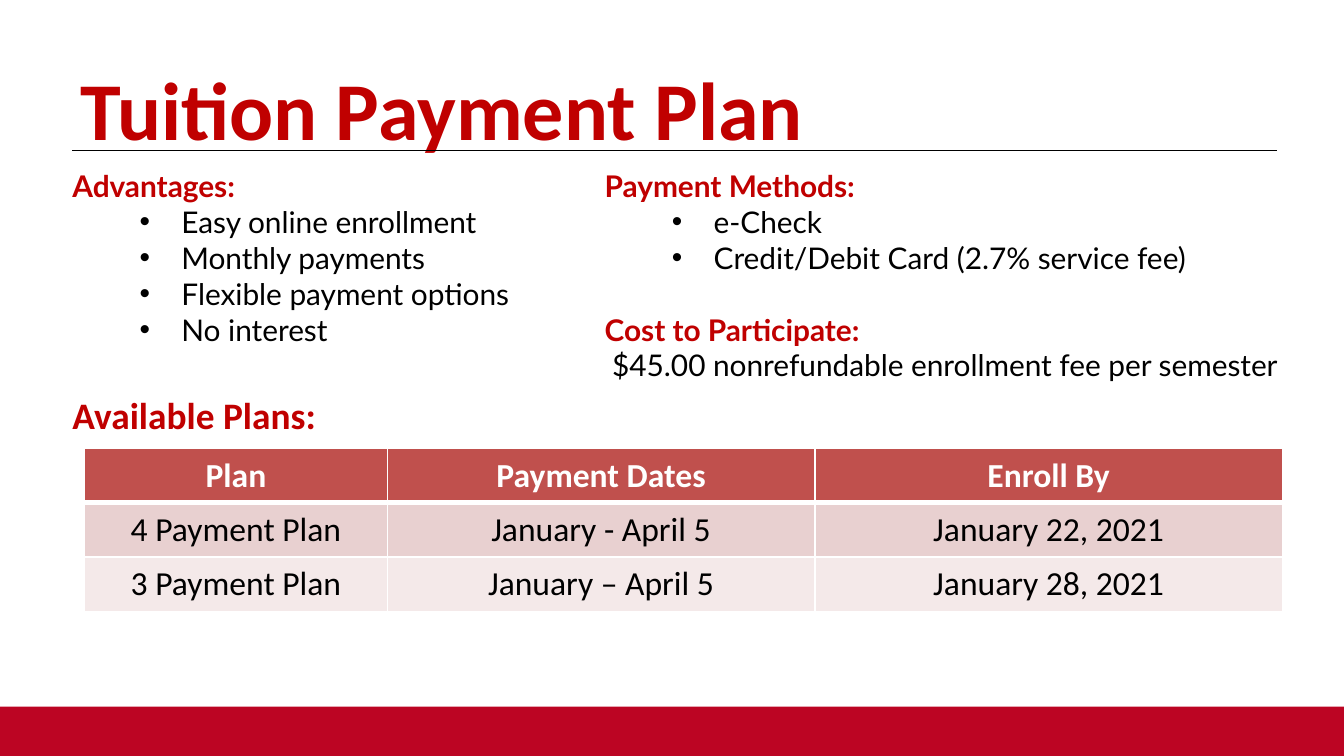
from dataclasses import dataclass

from lxml import etree
from pptx import Presentation
from pptx.dml.color import RGBColor
from pptx.enum.shapes import MSO_CONNECTOR, MSO_SHAPE
from pptx.enum.text import MSO_ANCHOR, MSO_AUTO_SIZE, PP_ALIGN
from pptx.oxml.ns import qn
from pptx.util import Cm, Pt

LEFT, CENTER = PP_ALIGN.LEFT, PP_ALIGN.CENTER
TOP, MIDDLE = MSO_ANCHOR.TOP, MSO_ANCHOR.MIDDLE
NO_FIT, GROW = MSO_AUTO_SIZE.NONE, MSO_AUTO_SIZE.SHAPE_TO_FIT_TEXT
RECTANGLE, STRAIGHT = MSO_SHAPE.RECTANGLE, MSO_CONNECTOR.STRAIGHT


@dataclass(frozen=True)
class Theme:
    red: str = "C00000"
    bar: str = "BC0523"
    black: str = "000000"
    white: str = "FFFFFF"
    header: str = "C0504D"
    bands: tuple = ("E8D0D0", "F4E9E9")
    head_font: str = "Calibri"
    text_font: str = "Lato"
    title: int = 44
    subhead: int = 20
    table: int = 18
    text: int = 16


T = Theme()


def rgb(color):
    return RGBColor.from_string(color)


def add_run(p, text, size, name, color, bold=False):
    r = p.add_run()
    r.text = text
    r.font.color.rgb = rgb(color)
    formats = {"size": Pt(size), "name": name, "bold": bold}
    for key, value in formats.items():
        setattr(r.font, key, value)


def set_frame(tf, anchor=TOP, fit=NO_FIT):
    formats = {"word_wrap": True, "auto_size": fit, "vertical_anchor": anchor}
    for key, value in formats.items():
        setattr(tf, key, value)


def set_indent(p, left, first=0, bullet=None):
    pPr = p._p.get_or_add_pPr()
    pPr.set("marL", str(Cm(left)))
    pPr.set("indent", str(Cm(first)))
    if bullet:
        etree.SubElement(pPr, qn("a:buFont")).set("typeface", "Arial")
        etree.SubElement(pPr, qn("a:buChar")).set("char", bullet)


def add_footer_bar(s, x, y, w, h):
    sp = s.shapes.add_shape(RECTANGLE, Cm(x), Cm(y), Cm(w), Cm(h))
    sp.shadow.inherit = False
    sp.fill.solid()
    sp.fill.fore_color.rgb = rgb(T.bar)
    sp.line.fill.background()


def add_title(s, x, y, w, h, text):
    sp = s.shapes.title
    box = {"left": x, "top": y, "width": w, "height": h}
    for key, value in box.items():
        setattr(sp, key, Cm(value))
    set_frame(sp.text_frame, MIDDLE)
    p = sp.text_frame.paragraphs[0]
    p.alignment = LEFT
    add_run(p, text, T.title, T.head_font, T.red, True)
    # Rule under the title, near the bottom of its box
    rule_y = Cm(y + 0.84 * h)
    line = s.shapes.add_connector(STRAIGHT, Cm(x + 0.1), rule_y,
                                  Cm(x + w), rule_y)
    line.line.color.rgb = rgb(T.black)
    line.line.width = Pt(0.75)
    etree.SubElement(line._element.spPr, qn("a:effectLst"))


def add_text_column(s, x, y, w, h, sections):
    """Each section is a heading, its lines and whether they are bulleted."""
    tf = s.shapes.add_textbox(Cm(x), Cm(y), Cm(w), Cm(h)).text_frame
    set_frame(tf, fit=GROW)
    for i, (heading, lines, bulleted) in enumerate(sections):
        p = tf.add_paragraph() if i else tf.paragraphs[0]
        if i:
            p.space_before = Pt(1.2 * T.text)
        add_run(p, heading, T.text, T.text_font, T.red, True)
        for text in lines:
            p = tf.add_paragraph()
            if bulleted:
                p.level = 1
                set_indent(p, 2.06, -0.79, "•")
            else:
                set_indent(p, 0.14)
            add_run(p, text, T.text, T.text_font, T.black)


def add_subhead(s, x, y, w, h, text):
    tf = s.shapes.add_textbox(Cm(x), Cm(y), Cm(w), Cm(h)).text_frame
    set_frame(tf)
    add_run(tf.paragraphs[0], text, T.subhead, T.head_font, T.red, True)


def set_borders(cell, **widths):
    tcPr = cell._tc.get_or_add_tcPr()
    for side in "LRTB":
        ln = etree.SubElement(tcPr, qn(f"a:ln{side}"))
        ln.set("w", str(Pt(widths.get(side, 1))))
        fill = etree.SubElement(ln, qn("a:solidFill"))
        etree.SubElement(fill, qn("a:srgbClr")).set("val", T.white)


def add_plan_table(s, x, y, widths, heights, rows):
    table = s.shapes.add_table(len(rows), len(widths), Cm(x), Cm(y),
                               Cm(sum(widths)), Cm(sum(heights))).table
    for column, width in zip(table.columns, widths):
        column.width = Cm(width)
    for i, (row, height) in enumerate(zip(rows, heights)):
        table.rows[i].height = Cm(height)
        header = i == 0
        for j, text in enumerate(row):
            cell = table.cell(i, j)
            # The edge between header and body is heavier
            set_borders(cell, B=3 if header else 1, T=3 if i == 1 else 1)
            cell.fill.solid()
            cell.fill.fore_color.rgb = rgb(
                T.header if header else T.bands[(i - 1) % 2])
            cell.vertical_anchor = MIDDLE
            p = cell.text_frame.paragraphs[0]
            p.alignment = CENTER
            add_run(p, text, T.table, T.head_font,
                    T.white if header else T.black, header)


def main():
    prs = Presentation()
    prs.slide_width, prs.slide_height = Cm(25.4), Cm(14.29)
    s = prs.slides.add_slide(prs.slide_layouts[5])

    add_footer_bar(s, 0, 13.36, 25.4, 0.93)
    add_title(s, 1.27, 0.84, 22.86, 2.39, "Tuition Payment Plan")

    # Two columns of facts
    add_text_column(s, 1.12, 3.05, 11.23, 4.37, [
        ("Advantages:", ["Easy online enrollment", "Monthly payments",
                         "Flexible payment options", "No interest"], True),
    ])
    add_text_column(s, 11.18, 3.05, 13.94, 4.37, [
        ("Payment Methods:",
         ["e-Check", "Credit/Debit Card (2.7% service fee)"], True),
        ("Cost to Participate:",
         ["$45.00 nonrefundable enrollment fee per semester"], False),
    ])

    # Plans on offer
    add_subhead(s, 1.12, 7.29, 20.12, 1.1, "Available Plans:")
    add_plan_table(s, 1.6, 8.48, [5.72, 8.08, 8.84], [1.02, 1.03, 1.03], [
        ("Plan", "Payment Dates", "Enroll By"),
        ("4 Payment Plan", "January - April 5", "January 22, 2021"),
        ("3 Payment Plan", "January – April 5", "January 28, 2021"),
    ])
    prs.save("out.pptx")


if __name__ == "__main__":
    main()
